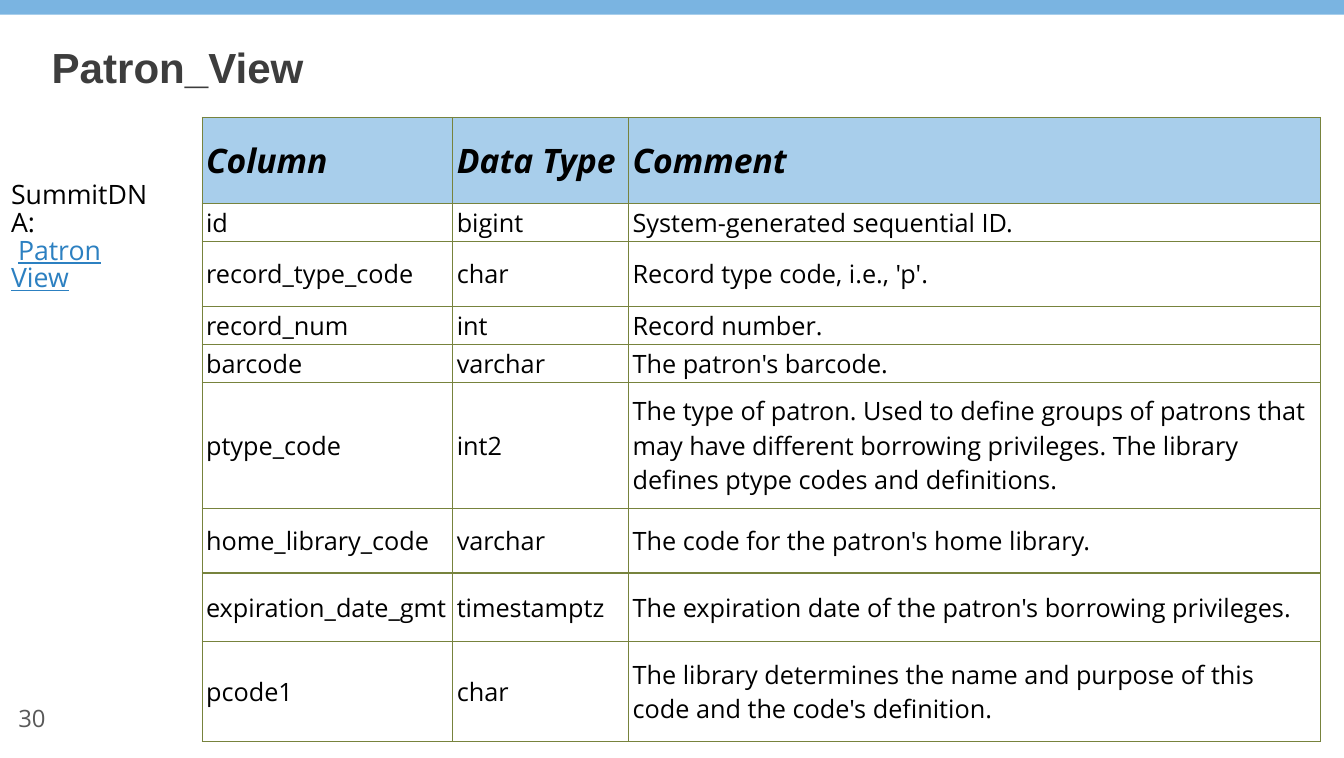
from lxml.etree import SubElement
from pptx import Presentation
from pptx.dml.color import RGBColor
from pptx.enum.shapes import MSO_SHAPE
from pptx.enum.text import MSO_ANCHOR
from pptx.oxml import parse_xml
from pptx.oxml.ns import nsdecls, qn
from pptx.util import Cm, Pt

COLORS = {
    "band": "7AB4E1",
    "title": "3D3D3D",
    "text": "000000",
    "link": "2C80C1",
    "number": "595959",
    "header": "A6CDEB",
    "border": "77833D",
}
BODY_FONT = "Open Sans"
COLUMN_WIDTHS = [6.3, 4.42, 17.38]
ROWS = [
    (2.16, "Column", "Data Type", "Comment"),
    (0.96, "id", "bigint", "System-generated sequential ID."),
    (1.63, "record_type_code", "char", "Record type code, i.e., 'p'."),
    (0.96, "record_num", "int", "Record number."),
    (0.96, "barcode", "varchar", "The patron's barcode."),
    (3.15, "ptype_code", "int2",
     "The type of patron. Used to define groups of patrons that may have "
     "different borrowing privileges. The library defines ptype codes and "
     "definitions."),
    (1.63, "home_library_code", "varchar",
     "The code for the patron's home library."),
    (1.73, "expiration_date_gmt", "timestamptz",
     "The expiration date of the patron's borrowing privileges."),
    (2.51, "pcode1", "char",
     "The library determines the name and purpose of this code and the "
     "code's definition."),
]


def color(name):
    return RGBColor.from_string(COLORS[name])


def style(font, size, color_name, name=BODY_FONT, bold=False, italic=False):
    font.size = Pt(size)
    font.name = name
    font.bold = bold
    font.italic = italic
    font.color.rgb = color(color_name)


def add_text_frame(slide, left, top, width, height, inset_x=0.28, inset_y=0.13):
    box = slide.shapes.add_textbox(Cm(left), Cm(top), Cm(width), Cm(height))
    frame = box.text_frame
    frame.word_wrap = True
    frame.margin_left = frame.margin_right = Cm(inset_x)
    frame.margin_top = frame.margin_bottom = Cm(inset_y)
    return frame


def add_band(slide, left, top, width, height):
    band = slide.shapes.add_shape(
        MSO_SHAPE.RECTANGLE, Cm(left), Cm(top), Cm(width), Cm(height))
    band.shadow.inherit = False
    band.fill.solid()
    band.fill.fore_color.rgb = color("band")
    band.line.fill.background()


def add_title(slide, left, top, width, height):
    frame = add_text_frame(slide, left, top, width, height, 0, 0)
    frame.text = "Patron_View"
    paragraph = frame.paragraphs[0]
    paragraph.line_spacing = 0.85
    style(paragraph.runs[0].font, 30, "title", "Arial", bold=True)


def add_page_number(slide, left, top, width, height):
    frame = add_text_frame(slide, left, top, width, height)
    frame.word_wrap = False
    frame.text = "30"
    style(frame.paragraphs[0].runs[0].font, 17, "number")


def add_reference(slide, left, top, width, height):
    frame = add_text_frame(slide, left, top, width, height)
    frame.word_wrap = False
    frame.text = "SummitDNA:\v "
    paragraph = frame.paragraphs[0]
    paragraph.line_spacing = 0.87
    for run in paragraph.runs:
        style(run.font, 19, "text")
    for word in ("Patron", "View"):
        if word == "View":
            paragraph.add_line_break()
        run = paragraph.add_run()
        run.text = word
        style(run.font, 19, "link")
        run.font.underline = True


def add_borders(cell):
    properties = cell._tc.get_or_add_tcPr()
    for index, side in enumerate(("lnL", "lnR", "lnT", "lnB")):
        properties.insert(index, parse_xml(
            f'<a:{side} {nsdecls("a")} w="{Pt(1)}"><a:solidFill>'
            f'<a:srgbClr val="{COLORS["border"]}"/></a:solidFill></a:{side}>'))


def fill_cell(cell, text, is_header):
    cell.text = text
    cell.vertical_anchor = MSO_ANCHOR.MIDDLE
    cell.margin_left = cell.margin_right = Cm(0.1)
    cell.margin_top = cell.margin_bottom = Cm(0.05)
    style(cell.text_frame.paragraphs[0].runs[0].font,
          24 if is_header else 18, "text", bold=is_header, italic=is_header)
    if is_header:
        cell.fill.solid()
        cell.fill.fore_color.rgb = color("header")
        tint = cell._tc.tcPr.find(qn("a:solidFill"))[0]
        SubElement(tint, qn("a:alpha"), val="97000")
    else:
        cell.fill.background()
    add_borders(cell)


def add_column_table(slide, left, top):
    width = sum(COLUMN_WIDTHS)
    height = sum(row[0] for row in ROWS)
    table = slide.shapes.add_table(
        len(ROWS), len(COLUMN_WIDTHS),
        Cm(left), Cm(top), Cm(width), Cm(height)).table
    table.first_row = False
    table.horz_banding = False
    for column, column_width in zip(table.columns, COLUMN_WIDTHS):
        column.width = Cm(column_width)
    for row_index, (row_height, *texts) in enumerate(ROWS):
        table.rows[row_index].height = Cm(row_height)
        for column_index, text in enumerate(texts):
            fill_cell(table.cell(row_index, column_index), text, row_index == 0)


def main():
    presentation = Presentation()
    presentation.slide_width = Cm(33.78)
    presentation.slide_height = Cm(19.05)
    slide = presentation.slides.add_slide(presentation.slide_layouts[6])
    add_page_number(slide, 0.18, 17.55, 1.3, 0.99)
    add_band(slide, 0, 0, 33.78, 0.37)
    add_title(slide, 1.3, 1.24, 31.17, 2.34)
    add_column_table(slide, 5.08, 2.95)
    add_reference(slide, 0, 4.45, 4.37, 1.9)
    presentation.save("out.pptx")


if __name__ == "__main__":
    main()
